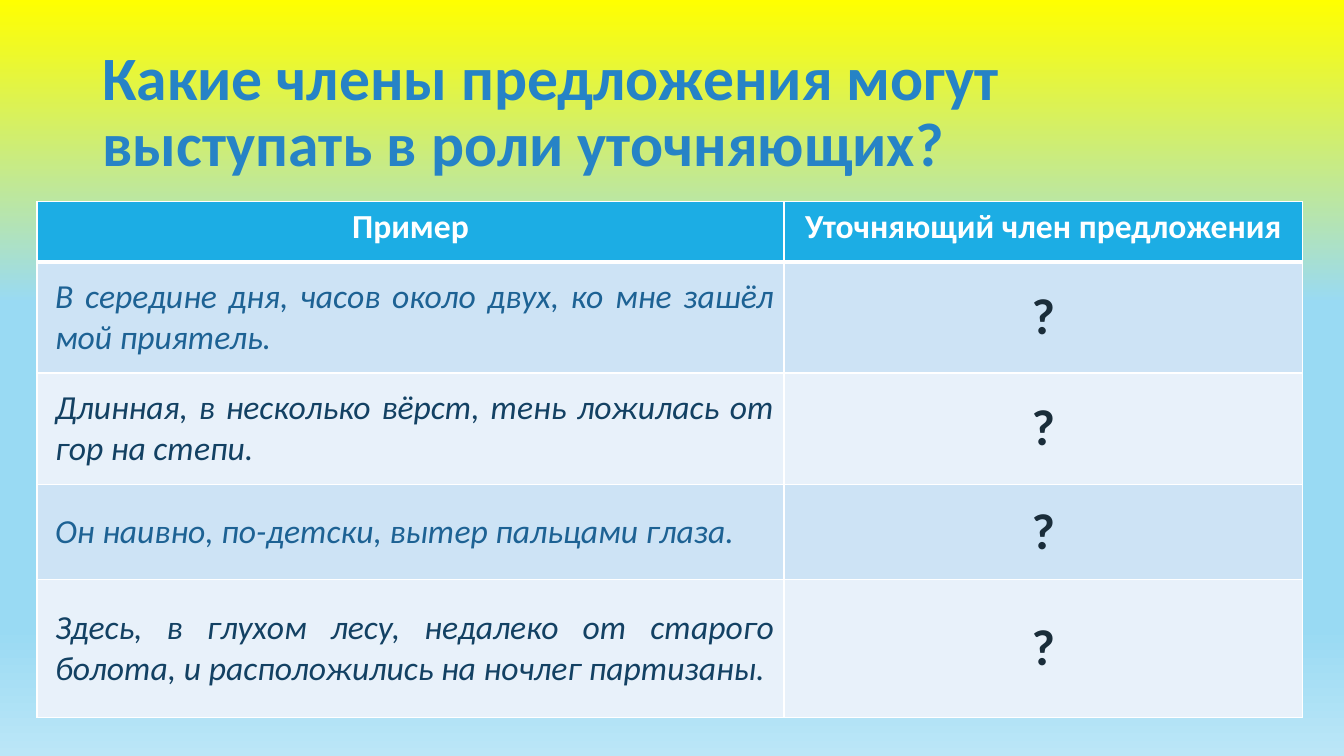
import copy
from dataclasses import dataclass

import lxml.etree
import pptx
import pptx.dml.color
import pptx.enum.text
import pptx.oxml.ns
import pptx.slide
import pptx.table
import pptx.text.text
import pptx.util

Pt = pptx.util.Pt
RGBColor = pptx.dml.color.RGBColor
Align = pptx.enum.text.PP_ALIGN
Anchor = pptx.enum.text.MSO_ANCHOR

YELLOW = RGBColor(0xFF, 0xFF, 0x00)
SKY = RGBColor(0x99, 0xDA, 0xF3)
PALE_SKY = RGBColor(0xBB, 0xE6, 0xF7)
TITLE_BLUE = RGBColor(0x26, 0x83, 0xC6)
HEADER_BLUE = RGBColor(0x1C, 0xAD, 0xE4)
WHITE = RGBColor(0xFF, 0xFF, 0xFF)
BAND_FILLS = (RGBColor(0xCD, 0xE3, 0xF5), RGBColor(0xE8, 0xF1, 0xFA))
EXAMPLE_COLORS = (RGBColor(0x1D, 0x62, 0x94), RGBColor(0x13, 0x41, 0x63))
QUESTION_COLOR = RGBColor(0x1A, 0x2D, 0x3A)

BACKGROUND_STOPS = ((0, YELLOW), (0.4, SKY), (0.83, SKY), (1, PALE_SKY))
COLUMN_WIDTHS = (533.7, 370.3)
ROW_HEIGHTS = (43, 79.5, 79.5, 68, 98.5)
EXAMPLES = (
    "В середине дня, часов около двух, ко мне зашёл мой приятель.",
    "Длинная, в несколько вёрст, тень ложилась от гор на степи.",
    "Он наивно, по-детски, вытер пальцами глаза.",
    "Здесь, в глухом лесу, недалеко от старого болота, и расположились на ночлег партизаны.",
)


@dataclass(frozen=True)
class TextStyle:
    size: float
    color: RGBColor
    bold: bool = True
    italic: bool = False
    alignment: Align = Align.CENTER
    indent: float = 0


@dataclass(frozen=True)
class CellContent:
    text: str
    style: TextStyle
    fill: RGBColor
    anchor: Anchor = Anchor.MIDDLE
    top_border: float = 1
    bottom_border: float = 1


def write_text(paragraph: pptx.text.text._Paragraph, text: str, style: TextStyle) -> None:
    paragraph.alignment = style.alignment
    if style.indent:
        properties = paragraph._p.get_or_add_pPr()
        properties.set("marL", str(int(Pt(style.indent))))
        properties.set("indent", "0")
    run = paragraph.add_run()
    run.text = text
    font_format = {
        "name": "Calibri",
        "size": Pt(style.size),
        "bold": style.bold,
        "italic": style.italic,
    }
    for attribute, value in font_format.items():
        setattr(run.font, attribute, value)
    run.font.color.rgb = style.color


def paint_background(slide: pptx.slide.Slide) -> None:
    fill = slide.background.fill
    fill.gradient()
    fill.gradient_angle = 270
    stop_list = fill._fill._gradFill.gsLst
    while len(stop_list) < len(BACKGROUND_STOPS):
        stop_list.append(copy.deepcopy(stop_list[0]))
    for stop, (position, color) in zip(fill.gradient_stops, BACKGROUND_STOPS):
        stop.position = position
        stop.color.rgb = color


def add_title(slide: pptx.slide.Slide) -> None:
    title = slide.shapes.add_textbox(Pt(66), Pt(28.8), Pt(828), Pt(104.4))
    frame = title.text_frame
    frame.word_wrap = True
    frame.vertical_anchor = Anchor.MIDDLE
    paragraph = frame.paragraphs[0]
    paragraph.line_spacing = 0.9
    style = TextStyle(44, TITLE_BLUE, alignment=Align.LEFT)
    write_text(paragraph, "Какие члены предложения могут выступать в роли уточняющих?", style)


def draw_borders(cell: pptx.table._Cell, top: float, bottom: float) -> None:
    properties = cell._tc.get_or_add_tcPr()
    qualified = pptx.oxml.ns.qn
    widths = {"a:lnL": 1, "a:lnR": 1, "a:lnT": top, "a:lnB": bottom}
    for index, (tag, width) in enumerate(widths.items()):
        line = lxml.etree.Element(qualified(tag), w=str(int(Pt(width))))
        fill = lxml.etree.SubElement(line, qualified("a:solidFill"))
        lxml.etree.SubElement(fill, qualified("a:srgbClr"), val=str(WHITE))
        properties.insert(index, line)


def fill_cell(cell: pptx.table._Cell, content: CellContent) -> None:
    cell.fill.solid()
    cell.fill.fore_color.rgb = content.fill
    cell.vertical_anchor = content.anchor
    draw_borders(cell, content.top_border, content.bottom_border)
    write_text(cell.text_frame.paragraphs[0], content.text, content.style)


def table_contents() -> list[list[CellContent]]:
    header_style = TextStyle(24, WHITE)
    question_style = TextStyle(36, QUESTION_COLOR)
    rows = [[
        CellContent(heading, header_style, HEADER_BLUE, Anchor.TOP, bottom_border=3)
        for heading in ("Пример", "Уточняющий член предложения")
    ]]
    for index, example in enumerate(EXAMPLES):
        band = index % 2
        example_style = TextStyle(24, EXAMPLE_COLORS[band], False, True, Align.JUSTIFY, 5.7)
        top_border = 3 if index == 0 else 1
        rows.append([
            CellContent(text, style, BAND_FILLS[band], top_border=top_border)
            for text, style in ((example, example_style), ("?", question_style))
        ])
    return rows


def add_examples_table(slide: pptx.slide.Slide) -> None:
    contents = table_contents()
    table = slide.shapes.add_table(
        len(ROW_HEIGHTS), len(COLUMN_WIDTHS), Pt(26.4), Pt(144),
        Pt(sum(COLUMN_WIDTHS)), Pt(sum(ROW_HEIGHTS)),
    ).table
    for column, width in zip(table.columns, COLUMN_WIDTHS):
        column.width = Pt(width)
    for row, height, row_contents in zip(table.rows, ROW_HEIGHTS, contents):
        row.height = Pt(height)
        for cell, content in zip(row.cells, row_contents):
            fill_cell(cell, content)


def main() -> None:
    presentation = pptx.Presentation()
    presentation.slide_width = Pt(960)
    presentation.slide_height = Pt(540)
    slide = presentation.slides.add_slide(presentation.slide_layouts[6])
    paint_background(slide)
    add_title(slide)
    add_examples_table(slide)
    presentation.save("out.pptx")


if __name__ == "__main__":
    main()
